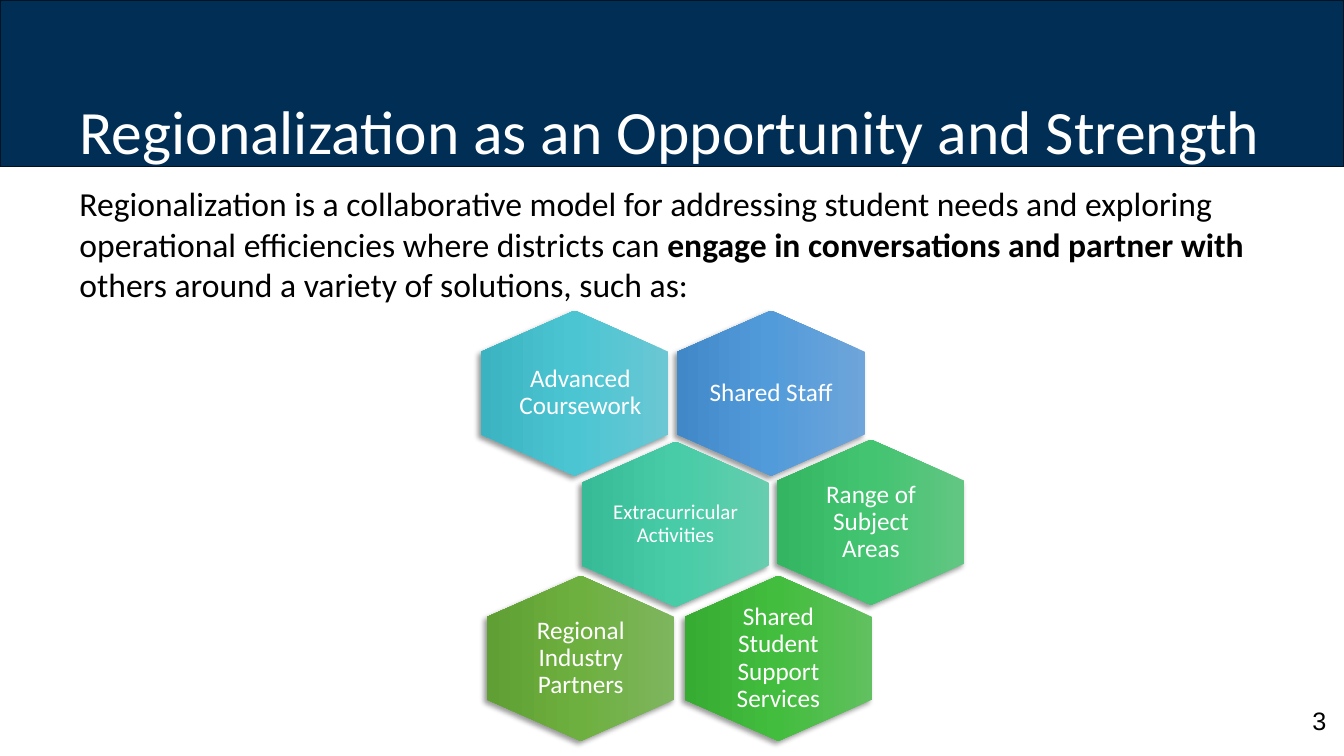
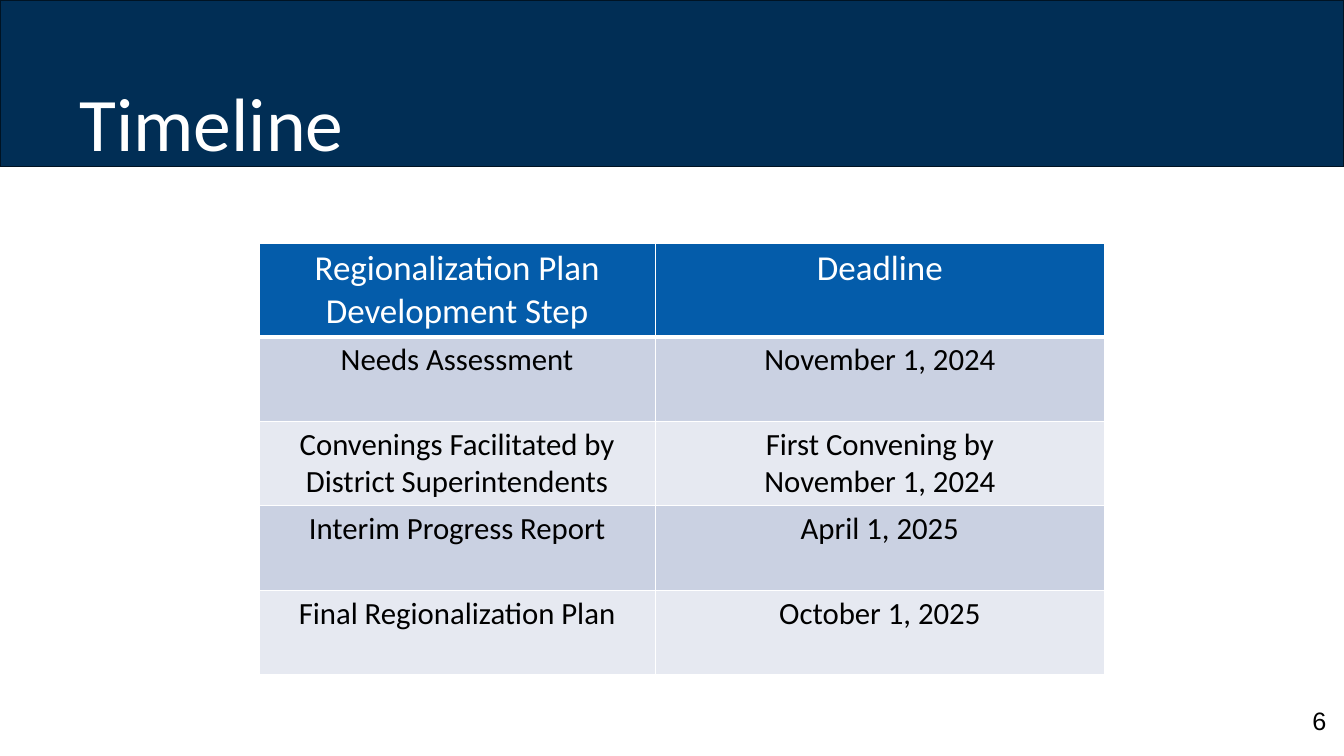
from dataclasses import dataclass

from lxml import etree
from pptx import Presentation
from pptx.dml.color import RGBColor
from pptx.enum.shapes import MSO_SHAPE
from pptx.enum.text import MSO_ANCHOR, PP_ALIGN
from pptx.oxml.ns import qn
from pptx.util import Pt

RECTANGLE, HEXAGON = MSO_SHAPE.RECTANGLE, MSO_SHAPE.HEXAGON
TOP, MIDDLE, BOTTOM = MSO_ANCHOR.TOP, MSO_ANCHOR.MIDDLE, MSO_ANCHOR.BOTTOM
LEFT, CENTER = PP_ALIGN.LEFT, PP_ALIGN.CENTER
BLANK_LAYOUT = 6


@dataclass(frozen=True)
class Theme:
    font: str = "Calibri"
    number_font: str = "Arial"
    navy: str = "012E55"
    navy_edge: str = "001323"
    white: str = "FFFFFF"
    black: str = "000000"
    header_blue: str = "045CAA"
    row_bands: tuple = ("CAD1E2", "E6E9F1")
    title_size: float = 44
    short_title_size: float = 54
    body_size: float = 24
    label_size: float = 18
    small_label_size: float = 15
    header_size: float = 25
    cell_size: float = 22
    number_size: float = 18


@dataclass(frozen=True)
class Solution:
    """One hexagon; its centre is measured from the corner of the honeycomb."""
    label: str
    center_x: float
    center_y: float
    gradient: tuple
    size: float = 18
    label_shift: float = 0


THEME = Theme()
SLIDE_SIZE = (960, 540)
BAND_BOX = (0, 0, 960, 118.8)
TITLE_BOX = (49.7, 18.7, 874.8, 104.4)
NUMBER_BOX = (924.5, 500.4, 36, 28.8)
INTRO_BOX = (49.7, 127.4, 874.8, 100)
HONEYCOMB_CORNER = (343.5, 221.8)
HEXAGON_SIZE = (118, 134)
LABEL_SIZE = (90, 78.5)
TABLE_CORNER = (185, 173.5)
COLUMN_WIDTHS = (283, 321)
HEADER_HEIGHT, ROW_HEIGHT = 67, 60.4

INTRO = [
    ("Regionalization is a collaborative model for addressing student needs and "
     "exploring operational efficiencies where districts can ", False),
    ("engage in conversations and partner with", True),
    (" others around a variety of solutions, such as:", False),
]
SOLUTIONS = [
    Solution("Advanced Coursework", 67, 59, ("6AC7D3", "4CC5D3", "3BB3C1"),
             label_shift=4),
    Solution("Shared Staff", 207.3, 59, ("6EA5DA", "529BDA", "4188C8")),
    Solution("Extracurricular Activities", 139, 152.6,
             ("66CDAE", "47CCA7", "37BB96"), THEME.small_label_size),
    Solution("Range of Subject Areas", 278.6, 151.2, ("62C683", "43C470", "33B561")),
    Solution("Regional Industry Partners", 71.3, 248.4, ("7EB55F", "6EB03F", "5F9F34")),
    Solution("Shared Student Support Services", 212.5, 248.4,
             ("61C05F", "43BD3E", "36AC32")),
]
TIMELINE = [
    ("Regionalization Plan Development Step", "Deadline"),
    ("Needs Assessment", "November 1, 2024"),
    ("Convenings Facilitated by District Superintendents",
     "First Convening by\nNovember 1, 2024"),
    ("Interim Progress Report", "April 1, 2025"),
    ("Final Regionalization Plan", "October 1, 2025"),
]


def points(values):
    return [Pt(value) for value in values]


def style(font, size, color, name=THEME.font, bold=False):
    font.size, font.name, font.bold = Pt(size), name, bold
    font.color.rgb = RGBColor.from_string(color)


def add_text(slide, box, runs, size, color, anchor=TOP, align=LEFT,
             name=THEME.font, spacing=1.0, insets=(7.2, 3.6)):
    """Add a one-paragraph text box from (text, bold) runs."""
    frame = slide.shapes.add_textbox(*points(box)).text_frame
    frame.word_wrap = True
    frame.vertical_anchor = anchor
    frame.margin_left = frame.margin_right = Pt(insets[0])
    frame.margin_top = frame.margin_bottom = Pt(insets[1])
    paragraph = frame.paragraphs[0]
    paragraph.alignment, paragraph.line_spacing = align, spacing
    for text, bold in runs:
        run = paragraph.add_run()
        run.text = text
        style(run.font, size, color, name, bold)


def add_color(parent, color):
    return etree.SubElement(parent, qn("a:srgbClr"), val=color)


def add_framed_slide(deck, title, number, title_size):
    """Add a slide with the navy band, its title and the page number."""
    slide = deck.slides.add_slide(deck.slide_layouts[BLANK_LAYOUT])
    band = slide.shapes.add_shape(RECTANGLE, *points(BAND_BOX))
    band.shadow.inherit = False
    band.fill.solid()
    band.fill.fore_color.rgb = RGBColor.from_string(THEME.navy)
    band.line.color.rgb = RGBColor.from_string(THEME.navy_edge)
    band.line.width = Pt(1)
    add_text(slide, TITLE_BOX, [(title, False)], title_size, THEME.white,
             anchor=BOTTOM, spacing=0.9)
    add_text(slide, NUMBER_BOX, [(number, False)], THEME.number_size, THEME.black,
             anchor=MIDDLE, align=CENTER, name=THEME.number_font)
    return slide


def fill_gradient(shape, colors):
    shape.fill.gradient()
    shape.fill.gradient_angle = 270
    stops = shape._element.spPr.find(qn("a:gradFill")).find(qn("a:gsLst"))
    for stop in list(stops):
        stops.remove(stop)
    for index, color in enumerate(colors):
        position = 100000 * index // (len(colors) - 1)
        add_color(etree.SubElement(stops, qn("a:gs"), pos=str(position)), color)


def cast_shadow(shape):
    """Drop a soft shadow to the lower left."""
    shape.shadow.inherit = False
    effects = shape._element.spPr.find(qn("a:effectLst"))
    shadow = etree.SubElement(effects, qn("a:outerShdw"), blurRad=str(Pt(4)),
                              dist=str(Pt(3)), dir="8100000", rotWithShape="0")
    etree.SubElement(add_color(shadow, THEME.black), qn("a:alpha"), val="40000")


def centered_box(x, y, size):
    width, height = size
    return x - width / 2, y - height / 2, width, height


def add_honeycomb(slide, corner, solutions):
    left, top = corner
    for solution in solutions:
        x, y = left + solution.center_x, top + solution.center_y
        cell = slide.shapes.add_shape(
            HEXAGON, *points(centered_box(x, y, HEXAGON_SIZE)))
        cell.rotation = 90
        cell.adjustments[0] = 0.25
        cell.line.fill.background()
        fill_gradient(cell, solution.gradient)
        cast_shadow(cell)
        add_text(slide, centered_box(x + solution.label_shift, y, LABEL_SIZE),
                 [(solution.label, False)], solution.size, THEME.white,
                 anchor=MIDDLE, align=CENTER, spacing=0.9, insets=(0, 0))


def set_borders(cell, widths):
    """Draw white borders, given widths for left, right, top and bottom."""
    properties = cell._tc.get_or_add_tcPr()
    for side, width in zip("LRTB", widths):
        line = etree.SubElement(properties, qn(f"a:ln{side}"), w=str(Pt(width)))
        add_color(etree.SubElement(line, qn("a:solidFill")), THEME.white)


def add_timeline(slide, corner, rows):
    size = sum(COLUMN_WIDTHS), HEADER_HEIGHT + ROW_HEIGHT * (len(rows) - 1)
    table = slide.shapes.add_table(len(rows), len(COLUMN_WIDTHS),
                                   *points(corner + size)).table
    table.horz_banding = False
    for column, width in zip(table.columns, COLUMN_WIDTHS):
        column.width = Pt(width)
    for index, texts in enumerate(rows):
        header = index == 0
        table.rows[index].height = Pt(HEADER_HEIGHT if header else ROW_HEIGHT)
        fill = THEME.header_blue if header else THEME.row_bands[(index - 1) % 2]
        text_size = THEME.header_size if header else THEME.cell_size
        text_color = THEME.white if header else THEME.black
        borders = (1, 1, 3 if index == 1 else 1, 3 if header else 1)
        for column, text in enumerate(texts):
            cell = table.cell(index, column)
            set_borders(cell, borders)
            cell.fill.solid()
            cell.fill.fore_color.rgb = RGBColor.from_string(fill)
            cell.margin_left = cell.margin_right = Pt(6.6)
            cell.margin_top = cell.margin_bottom = Pt(3.3)
            cell.text_frame.text = text
            for paragraph in cell.text_frame.paragraphs:
                paragraph.alignment = CENTER
                for run in paragraph.runs:
                    style(run.font, text_size, text_color)


def build_opportunity_slide(deck):
    slide = add_framed_slide(deck, "Regionalization as an Opportunity and Strength",
                             "3", THEME.title_size)
    add_text(slide, INTRO_BOX, INTRO, THEME.body_size, THEME.black)
    add_honeycomb(slide, HONEYCOMB_CORNER, SOLUTIONS)


def build_timeline_slide(deck):
    slide = add_framed_slide(deck, "Timeline", "6", THEME.short_title_size)
    add_timeline(slide, TABLE_CORNER, TIMELINE)


def main():
    deck = Presentation()
    deck.slide_width, deck.slide_height = points(SLIDE_SIZE)
    build_opportunity_slide(deck)
    build_timeline_slide(deck)
    deck.save("out.pptx")


if __name__ == "__main__":
    main()
